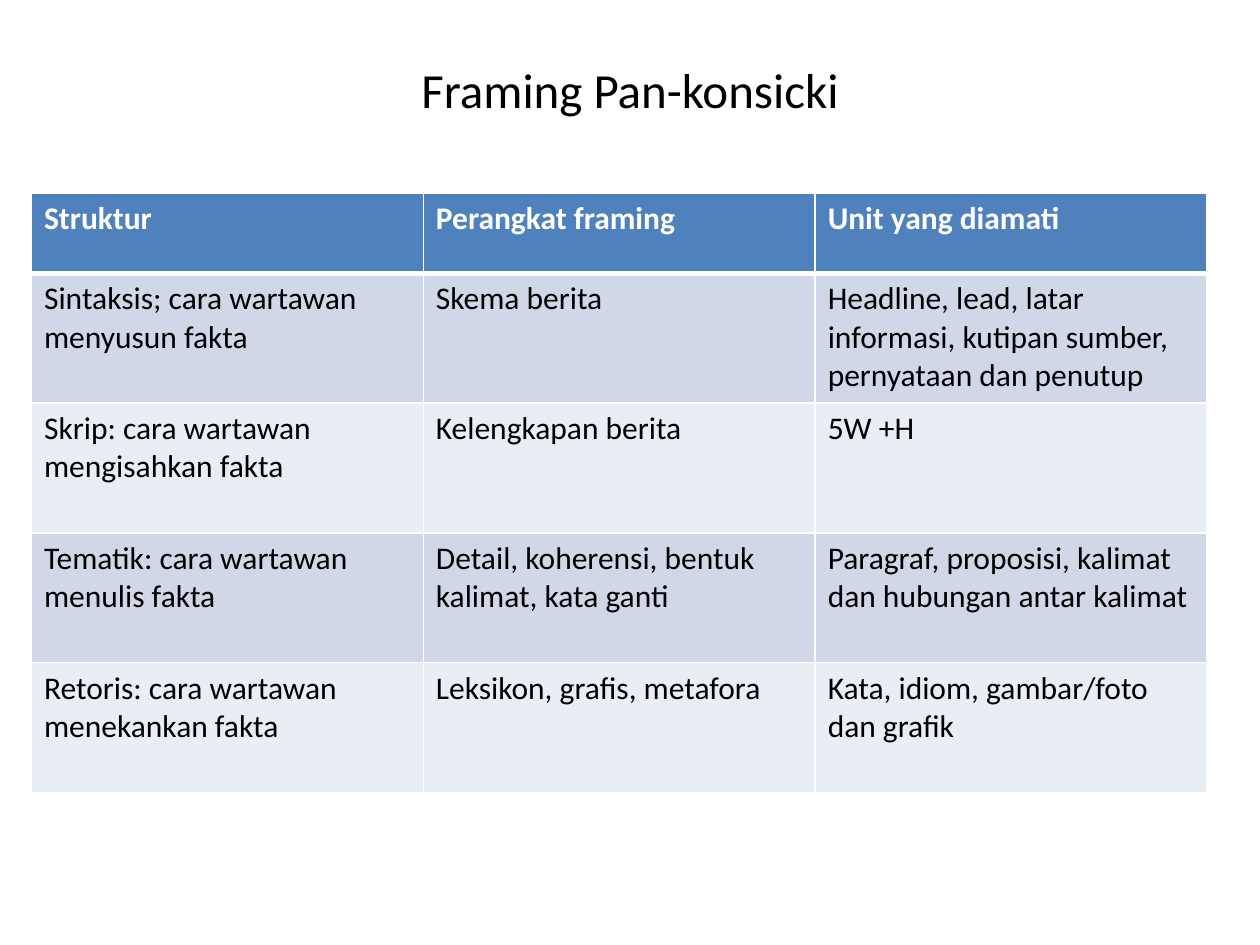
import pptx
import pptx.dml.color
import pptx.enum.text
import pptx.oxml
import pptx.oxml.ns
import pptx.util
from pptx.util import Inches


def color(value):
    return pptx.dml.color.RGBColor.from_string(value)


def add_border(cell, side, points):
    """Draw a white line on one side (L, R, T or B); call before filling the cell."""
    cell._tc.get_or_add_tcPr().append(pptx.oxml.parse_xml(
        f'<a:ln{side} {pptx.oxml.ns.nsdecls("a")} w="{pptx.util.Pt(points)}">'
        f'<a:solidFill><a:srgbClr val="FFFFFF"/></a:solidFill></a:ln{side}>'))


rows = [
    ("Struktur", "Perangkat framing", "Unit yang diamati"),
    ("Sintaksis; cara wartawan menyusun fakta", "Skema berita",
     "Headline, lead, latar informasi, kutipan sumber, pernyataan dan penutup"),
    ("Skrip: cara wartawan mengisahkan fakta", "Kelengkapan berita", "5W +H"),
    ("Tematik: cara wartawan menulis fakta",
     "Detail, koherensi, bentuk kalimat, kata ganti",
     "Paragraf, proposisi, kalimat dan hubungan antar kalimat"),
    ("Retoris: cara wartawan menekankan fakta", "Leksikon, grafis, metafora",
     "Kata, idiom, gambar/foto dan grafik"),
]

presentation = pptx.Presentation()
presentation.slide_width = Inches(10)
presentation.slide_height = Inches(7.5)
slide = presentation.slides.add_slide(presentation.slide_layouts[6])

title = slide.shapes.add_textbox(Inches(0.75), Inches(0.33), Inches(8.5), Inches(0.75))
title.text_frame.word_wrap = True
title.text_frame.vertical_anchor = pptx.enum.text.MSO_ANCHOR.MIDDLE
title.text_frame.text = "Framing Pan-konsicki"
paragraph = title.text_frame.paragraphs[0]
paragraph.alignment = pptx.enum.text.PP_ALIGN.CENTER
font = paragraph.runs[0].font
font.name = "Calibri"
font.size = pptx.util.Pt(28)
font.color.rgb = color("000000")

table = slide.shapes.add_table(
    len(rows), 3, Inches(0.25), Inches(1.53), Inches(9.33), Inches(4.75)).table
for column in table.columns:
    column.width = Inches(3.11)

for row_index, texts in enumerate(rows):
    is_header = row_index == 0
    table.rows[row_index].height = Inches(0.64 if is_header else 1.03)
    if is_header:
        fill_color = "4F81BD"
    else:
        fill_color = "D0D8E8" if row_index % 2 else "E9EDF4"
    for column_index, text in enumerate(texts):
        cell = table.cell(row_index, column_index)
        for side in "LRTB":
            header_line = (is_header and side == "B") or (row_index == 1 and side == "T")
            add_border(cell, side, 3 if header_line else 1)
        cell.fill.solid()
        cell.fill.fore_color.rgb = color(fill_color)
        cell.text_frame.text = text
        font = cell.text_frame.paragraphs[0].runs[0].font
        font.name = "Calibri"
        font.size = pptx.util.Pt(18)
        font.bold = is_header
        font.color.rgb = color("FFFFFF" if is_header else "000000")

presentation.save("out.pptx")
